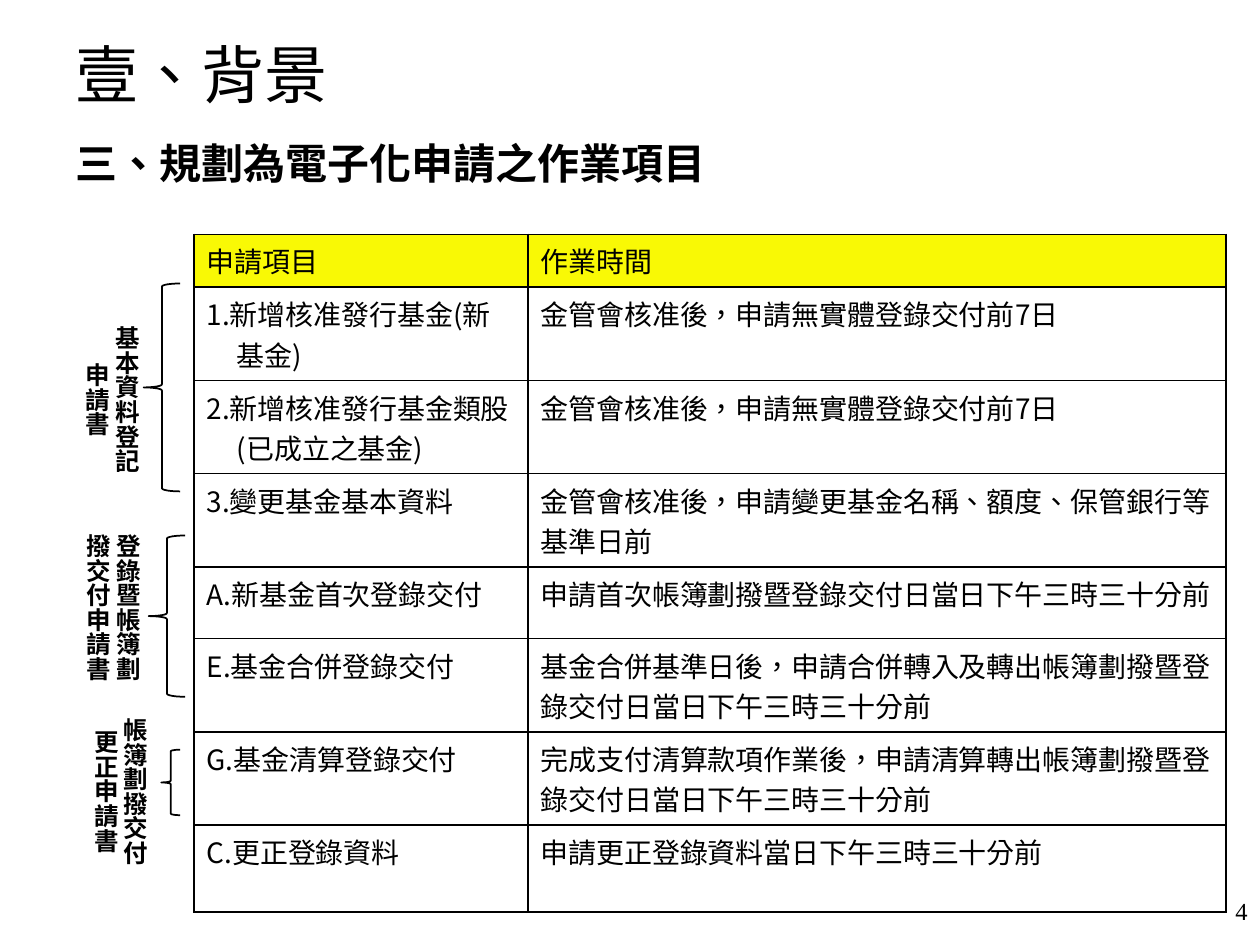
import pptx
import pptx.util
import pptx.dml.color
import pptx.enum.lang
import pptx.enum.shapes
import pptx.enum.text
import pptx.oxml
import pptx.oxml.ns

SANS = "Noto Sans CJK SC"
SERIF = "Times New Roman"
BLACK = "000000"
YELLOW = "F9F905"
ALIGN = pptx.enum.text.PP_ALIGN
ANCHOR = pptx.enum.text.MSO_ANCHOR

TABLE_ROWS = [
    ("申請項目", "作業時間"),
    ("1.新增核准發行基金(新基金)", "金管會核准後，申請無實體登錄交付前7日"),
    ("2.新增核准發行基金類股(已成立之基金)", "金管會核准後，申請無實體登錄交付前7日"),
    ("3.變更基金基本資料", "金管會核准後，申請變更基金名稱、額度、保管銀行等基準日前"),
    ("A.新基金首次登錄交付", "申請首次帳簿劃撥暨登錄交付日當日下午三時三十分前"),
    ("E.基金合併登錄交付", "基金合併基準日後，申請合併轉入及轉出帳簿劃撥暨登錄交付日當日下午三時三十分前"),
    ("G.基金清算登錄交付", "完成支付清算款項作業後，申請清算轉出帳簿劃撥暨登錄交付日當日下午三時三十分前"),
    ("C.更正登錄資料", "申請更正登錄資料當日下午三時三十分前"),
]
ROW_HEIGHTS = [4.2, 7.4, 7.4, 7.4, 5.7, 7.4, 7.4, 6.9]
COLUMN_WIDTHS = [26.5, 55.4]
FORM_GROUPS = [
    ("基本資料登記申請書", (5, 24.9), (11.4, 22.5, 2.9, 16.5)),
    ("登錄暨帳簿劃撥交付申請書", (5.1, 41.4), (11.8, 42.5, 2.9, 12.8)),
    ("帳簿劃撥交付更正申請書", (5.7, 56), (12.8, 59.5, 1.5, 5.2)),
]


def color(hex_string):
    return pptx.dml.color.RGBColor.from_string(hex_string)


class SlideBuilder:
    """Draws styled elements on one slide, measured on a grid of 100 columns by 75 rows."""

    def __init__(self, presentation):
        self.unit = presentation.slide_width / 100
        self.slide = presentation.slides.add_slide(presentation.slide_layouts[5])

    def length(self, cells):
        return int(cells * self.unit)

    def box(self, *cells):
        return [self.length(cell) for cell in cells]

    def fill_text(self, frame, text, size, font=SANS, bold=False, align=ALIGN.LEFT, spacing=None):
        paragraph = frame.paragraphs[0]
        paragraph.alignment = align
        paragraph.line_spacing = spacing
        run = paragraph.add_run()
        run.text = text
        run.font.size = pptx.util.Pt(size)
        run.font.bold = bold
        run.font.color.rgb = color(BLACK)
        run.font.name = font
        run.font.language_id = pptx.enum.lang.MSO_LANGUAGE_ID.TRADITIONAL_CHINESE
        east_asian = pptx.oxml.parse_xml(
            f'<a:ea {pptx.oxml.ns.nsdecls("a")} typeface="{SANS}"/>')
        run.font._element.find(pptx.oxml.ns.qn("a:latin")).addnext(east_asian)
        return paragraph

    def title(self, text, cells):
        shape = self.slide.shapes.title
        shape.left, shape.top, shape.width, shape.height = self.box(*cells)
        frame = shape.text_frame
        frame.vertical_anchor = ANCHOR.TOP
        frame.auto_size = pptx.enum.text.MSO_AUTO_SIZE.NONE
        self.fill_text(frame, text, 36, SERIF, spacing=0.9)

    def text(self, text, cells, size, anchor=ANCHOR.TOP, vertical=False, **style):
        frame = self.slide.shapes.add_textbox(*self.box(*cells)).text_frame
        frame.word_wrap = True
        frame.vertical_anchor = anchor
        if vertical:
            frame._txBody.bodyPr.set("vert", "eaVert")
        self.fill_text(frame, text, size, **style)

    def brace(self, cells):
        kind = pptx.enum.shapes.MSO_SHAPE.LEFT_BRACE
        shape = self.slide.shapes.add_shape(kind, *self.box(*cells))
        shape.shadow.inherit = False
        shape.fill.background()
        shape.line.color.rgb = color(BLACK)
        shape.line.width = pptx.util.Pt(1)

    def border(self, cell):
        properties = cell._tc.get_or_add_tcPr()
        for index, side in enumerate(("lnL", "lnR", "lnT", "lnB")):
            properties.insert(index, pptx.oxml.parse_xml(
                f'<a:{side} {pptx.oxml.ns.nsdecls("a")} w="{pptx.util.Pt(1)}"><a:solidFill>'
                f'<a:srgbClr val="{BLACK}"/></a:solidFill></a:{side}>'))

    def table(self, rows, left, top, widths, heights):
        cells = self.box(left, top, sum(widths), sum(heights))
        table = self.slide.shapes.add_table(len(rows), len(widths), *cells).table
        for column, width in zip(table.columns, widths):
            column.width = self.length(width)
        for row_index, (row, height) in enumerate(zip(rows, heights)):
            table.rows[row_index].height = self.length(height)
            for column_index, text in enumerate(row):
                cell = table.cell(row_index, column_index)
                if row_index == 0:
                    cell.fill.solid()
                    cell.fill.fore_color.rgb = color(YELLOW)
                else:
                    cell.fill.background()
                self.border(cell)
                paragraph = self.fill_text(cell.text_frame, text, 16)
                if row_index in (1, 2) and column_index == 0:
                    properties = paragraph._p.get_or_add_pPr()
                    properties.set("marL", str(self.length(2.4)))
                    properties.set("indent", str(-self.length(2.4)))


def main():
    presentation = pptx.Presentation()
    presentation.slide_width = pptx.util.Inches(10)
    presentation.slide_height = pptx.util.Inches(7.5)
    builder = SlideBuilder(presentation)
    builder.text("4", (79.2, 70.6, 20.8, 4.4), 14, font=SERIF, align=ALIGN.RIGHT)
    builder.table(TABLE_ROWS, 15.4, 18.6, COLUMN_WIDTHS, ROW_HEIGHTS)
    builder.text("三、規劃為電子化申請之作業項目", (5, 10.8, 90, 4.7), 24,
                 anchor=ANCHOR.MIDDLE, bold=True, spacing=0.9)
    builder.title("壹、背景", (5, 3, 90, 5.1))
    for label, (left, top), brace in FORM_GROUPS:
        builder.brace(brace)
        builder.text(label, (left, top, 6.7, 14.2), 14, vertical=True,
                     bold=True, align=ALIGN.CENTER)
    presentation.save("out.pptx")


if __name__ == "__main__":
    main()
